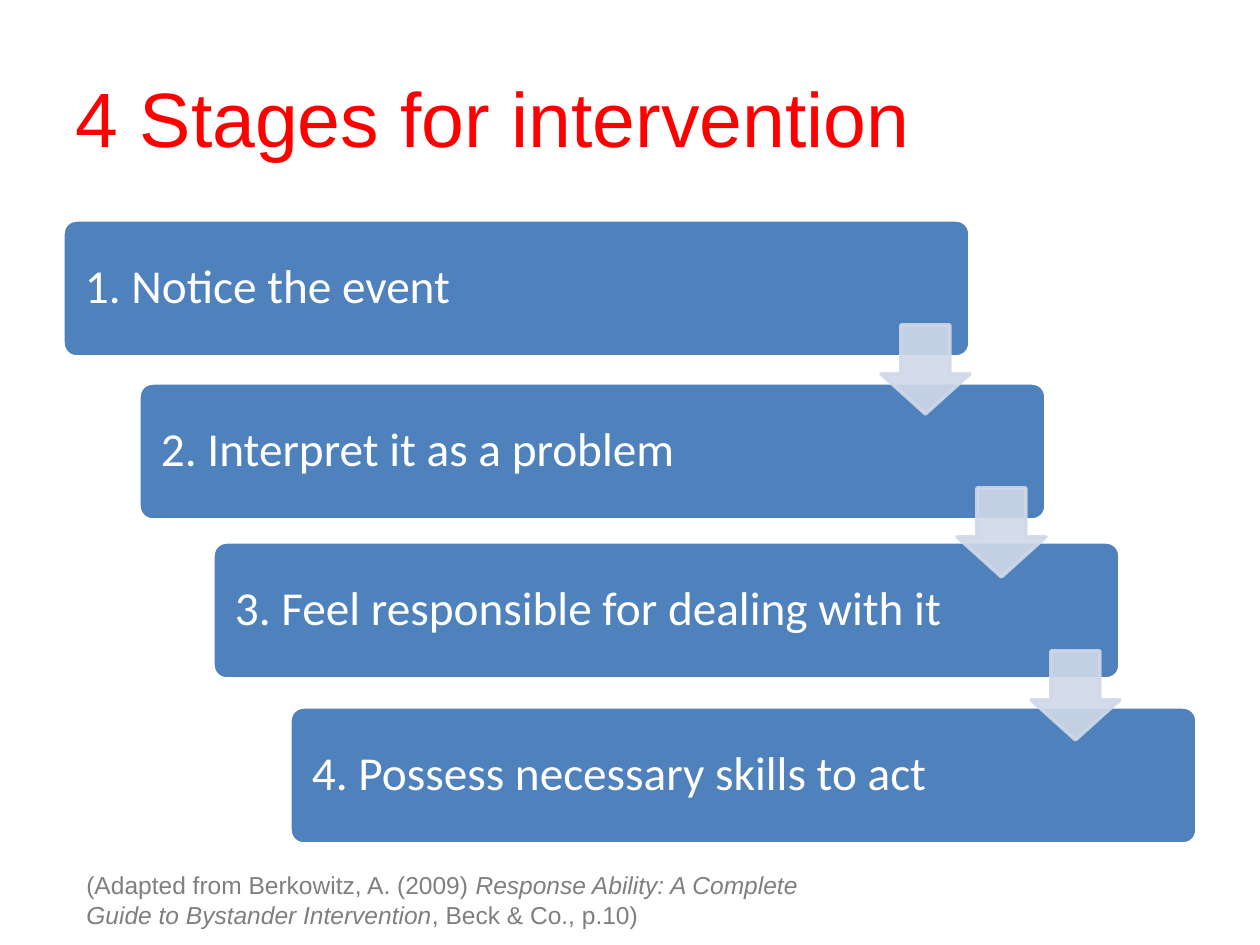
from lxml.etree import SubElement
from pptx import Presentation
from pptx.dml.color import RGBColor
from pptx.enum.shapes import MSO_SHAPE
from pptx.enum.text import MSO_ANCHOR, PP_ALIGN
from pptx.oxml.ns import qn
from pptx.util import Emu, Pt

RED = RGBColor(0xFF, 0x00, 0x00)
BLUE = RGBColor(0x4F, 0x81, 0xBD)
PALE = RGBColor(0xD0, 0xD8, 0xE8)
GRAY = RGBColor(0x7F, 0x7F, 0x7F)
WHITE = RGBColor(0xFF, 0xFF, 0xFF)


def px(*lengths):
    return [Emu(round(n * 914400 / 126)) for n in lengths]


def add_block(s, kind, box, color, line):
    sp = s.shapes.add_shape(kind, *px(*box))
    sp.shadow.inherit = False
    sp.fill.solid()
    sp.fill.fore_color.rgb = color
    sp.line.color.rgb = line
    sp.line.width = Pt(2)
    return sp


prs = Presentation()
prs.slide_width, prs.slide_height = px(1260, 945)
s = prs.slides.add_slide(prs.slide_layouts[5])

title = s.shapes.title
title.left, title.top, title.width, title.height = px(63, 38, 1134, 157)
tf = title.text_frame
tf.text = "4 Stages for intervention"
tf.vertical_anchor = MSO_ANCHOR.MIDDLE
p = tf.paragraphs[0]
p.alignment = PP_ALIGN.LEFT
p.font.name = "Arial"
p.font.size = Pt(44)
p.font.color.rgb = RED

stages = [
    (63, 220, "1. Notice the event"),
    (139, 383, "2. Interpret it as a problem"),
    (213, 542, "3. Feel responsible for dealing with it"),
    (290, 707, "4. Possess necessary skills to act"),
]
for left, top, text in stages:
    sp = add_block(s, MSO_SHAPE.ROUNDED_RECTANGLE, (left, top, 907, 137), BLUE, WHITE)
    sp.adjustments[0] = 0.1
    tf = sp.text_frame
    tf.text = text
    tf.word_wrap = True
    tf.vertical_anchor = MSO_ANCHOR.MIDDLE
    tf.margin_left, tf.margin_right = px(18, 142)
    p = tf.paragraphs[0]
    p.alignment = PP_ALIGN.LEFT
    p.line_spacing = 0.9
    p.font.name = "Calibri"
    p.font.size = Pt(27)
    p.font.color.rgb = WHITE

for i, (left, top, text) in enumerate(stages[:-1]):
    sp = add_block(s, MSO_SHAPE.DOWN_ARROW, (left + 818, 325 + 163 * i, 89, 89), PALE, PALE)
    sp.adjustments[0] = 0.55
    sp.adjustments[1] = 0.45
    for color in sp.element.spPr.iter(qn("a:srgbClr")):
        SubElement(color, qn("a:alpha"), val="90000")

sp = s.shapes.add_textbox(*px(74, 864, 804, 72))
tf = sp.text_frame
tf.word_wrap = True
p = tf.paragraphs[0]
for text, italic in [
    ("(Adapted from Berkowitz, A. (2009) ", False),
    ("Response Ability: A Complete Guide to Bystander Intervention", True),
    (", Beck & Co., p.10)", False),
]:
    r = p.add_run()
    r.text = text
    r.font.name = "Arial"
    r.font.size = Pt(14)
    r.font.italic = italic
    r.font.color.rgb = GRAY

prs.save("out.pptx")
